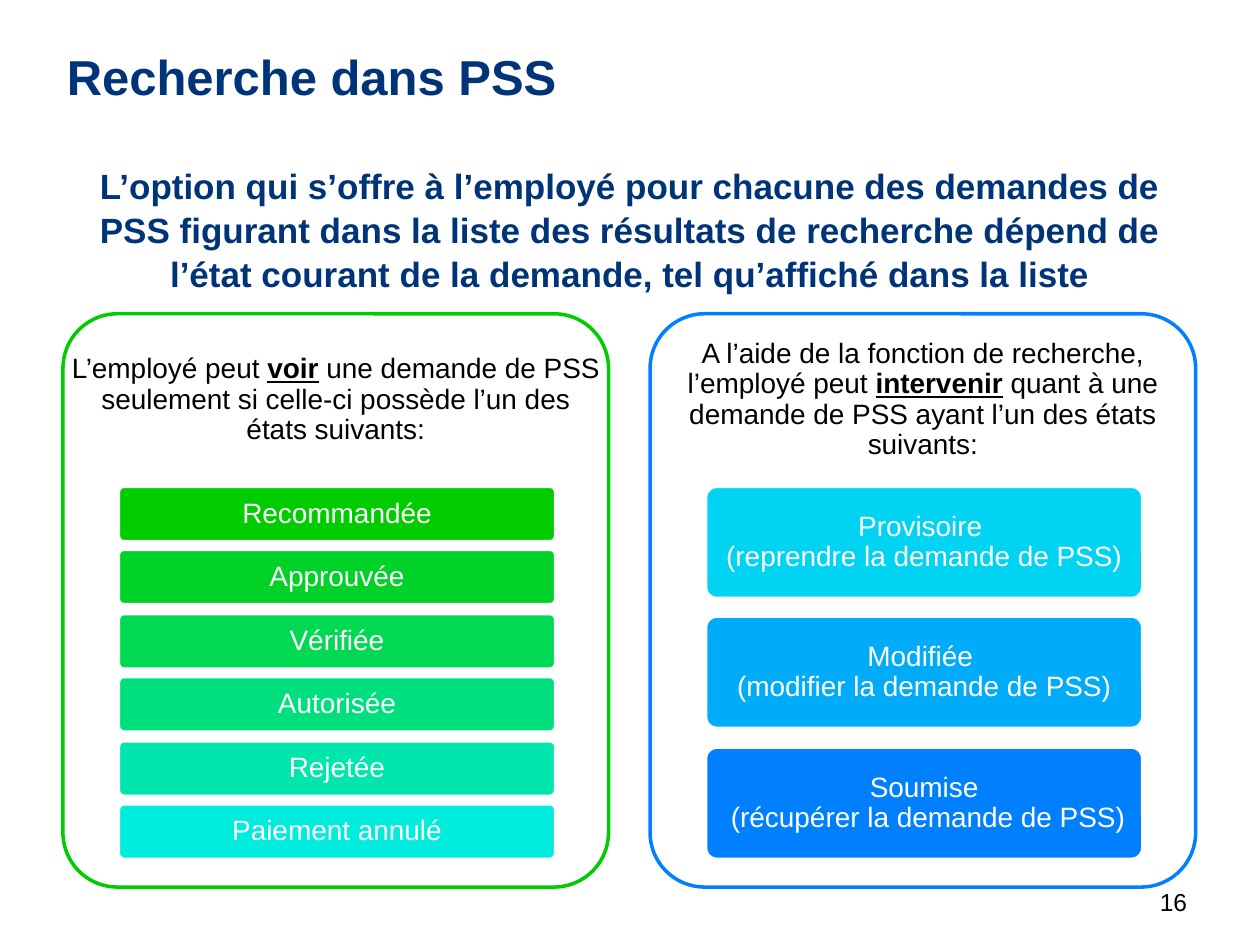
"""Builds the slide on searching PSS requests and the states they can have."""
from dataclasses import dataclass

from pptx import Presentation
from pptx.dml.color import RGBColor
from pptx.enum.shapes import MSO_SHAPE
from pptx.enum.text import MSO_ANCHOR, PP_ALIGN
from pptx.util import Inches, Pt

PX = Inches(0.01)


@dataclass(frozen=True)
class Theme:
    font: str = "Arial"
    navy: str = "003478"
    black: str = "000000"
    white: str = "FFFFFF"
    green: str = "00CC00"
    blue: str = "0080FF"
    title_size: int = 28
    lead_size: int = 20
    body_size: int = 16
    number_size: int = 14
    line_width: int = 2
    corner: float = 0.1


def px(*lengths):
    return [round(length * PX) for length in lengths]


def write(frame, text, *, font, size, color, bold=False, align=PP_ALIGN.CENTER,
          anchor=MSO_ANCHOR.MIDDLE, spacing=1.0, insets=(10, 5)):
    """Fill a text frame; *asterisks* mark bold underlined words."""
    frame.word_wrap = True
    frame.vertical_anchor = anchor
    frame.margin_left = frame.margin_right = px(insets[0])[0]
    frame.margin_top = frame.margin_bottom = px(insets[1])[0]
    paragraph = frame.paragraphs[0]
    paragraph.alignment = align
    paragraph.line_spacing = spacing
    for row, line in enumerate(text.split("\n")):
        if row:
            paragraph.add_line_break()
        for index, part in enumerate(line.split("*")):
            stressed = index % 2 == 1
            run = paragraph.add_run()
            run.text = part
            run.font.name = font
            run.font.size = Pt(size)
            run.font.bold = bold or stressed
            run.font.underline = stressed
            run.font.color.rgb = RGBColor.from_string(color)


class SlideBuilder:
    def __init__(self, slide, theme):
        self.slide = slide
        self.theme = theme

    def title(self, text, box):
        heading = self.slide.shapes.title
        heading.left, heading.top, heading.width, heading.height = px(*box)
        write(heading.text_frame, text, font=self.theme.font, size=self.theme.title_size,
              color=self.theme.navy, bold=True, align=PP_ALIGN.LEFT)

    def text(self, text, box, **style):
        label = self.slide.shapes.add_textbox(*px(*box))
        write(label.text_frame, text, font=self.theme.font, **style)

    def rounded(self, box, fill, line):
        outline = self.slide.shapes.add_shape(MSO_SHAPE.ROUNDED_RECTANGLE, *px(*box))
        outline.adjustments[0] = self.theme.corner
        outline.shadow.inherit = False
        outline.fill.solid()
        outline.fill.fore_color.rgb = RGBColor.from_string(fill)
        outline.line.color.rgb = RGBColor.from_string(line)
        outline.line.width = Pt(self.theme.line_width)
        return outline

    def state(self, text, box, fill):
        card = self.rounded(box, fill, self.theme.white)
        write(card.text_frame, text, font=self.theme.font, size=self.theme.body_size,
              color=self.theme.white, spacing=0.9, insets=(4, 3))

    def panel(self, left, line, intro, states):
        """Draw a framed list whose cards share one height, with gaps of 2/13 of it."""
        top, width, height, intro_height, cards_height = 249, 433, 455, 137, 296
        self.rounded((left, top, width, height), self.theme.white, line)
        self.text(intro, (left, top, width, intro_height), size=self.theme.body_size,
                  color=self.theme.black, spacing=0.9, insets=(6, 6))
        gap_ratio = 2 / 13
        card_height = cards_height / (len(states) + (len(states) - 1) * gap_ratio)
        for index, (name, fill) in enumerate(states):
            card_top = top + intro_height + index * card_height * (1 + gap_ratio)
            self.state(name, (left + 44, round(card_top), 347, round(card_height)), fill)


def main():
    theme = Theme()
    deck = Presentation()
    deck.slide_width, deck.slide_height = px(1000, 750)
    builder = SlideBuilder(deck.slides.add_slide(deck.slide_layouts[5]), theme)

    builder.title("Recherche dans PSS", (43, 30, 913, 60))
    builder.text(
        "L’option qui s’offre à l’employé pour chacune des demandes de PSS figurant dans "
        "la liste des résultats de recherche dépend de l’état courant de la demande, "
        "tel qu’affiché dans la liste",
        (50, 124, 900, 125), size=theme.lead_size, color=theme.navy, bold=True,
        anchor=MSO_ANCHOR.TOP, spacing=1.05)

    builder.panel(
        50, theme.green,
        "L’employé peut *voir* une demande de PSS seulement si celle-ci possède "
        "l’un des états suivants:",
        [("Recommandée", theme.green), ("Approuvée", "00D227"), ("Vérifiée", "00D951"),
         ("Autorisée", "00DF7D"), ("Rejetée", "00E6AC"), ("Paiement annulé", "00ECDD")])
    builder.panel(
        516, theme.blue,
        "A l’aide de la fonction de recherche, l’employé peut *intervenir* quant à une "
        "demande de PSS ayant l’un des états suivants:",
        [("Provisoire \n(reprendre la demande de PSS)", "00D4F2"),
         ("Modifiée \n(modifier la demande de PSS)", "00ABF9"),
         ("Soumise\n (récupérer la demande de PSS)", theme.blue)])

    builder.text("16", (744, 699, 208, 29), size=theme.number_size, color=theme.black,
                 align=PP_ALIGN.RIGHT, anchor=MSO_ANCHOR.TOP)
    deck.save("out.pptx")


if __name__ == "__main__":
    main()
